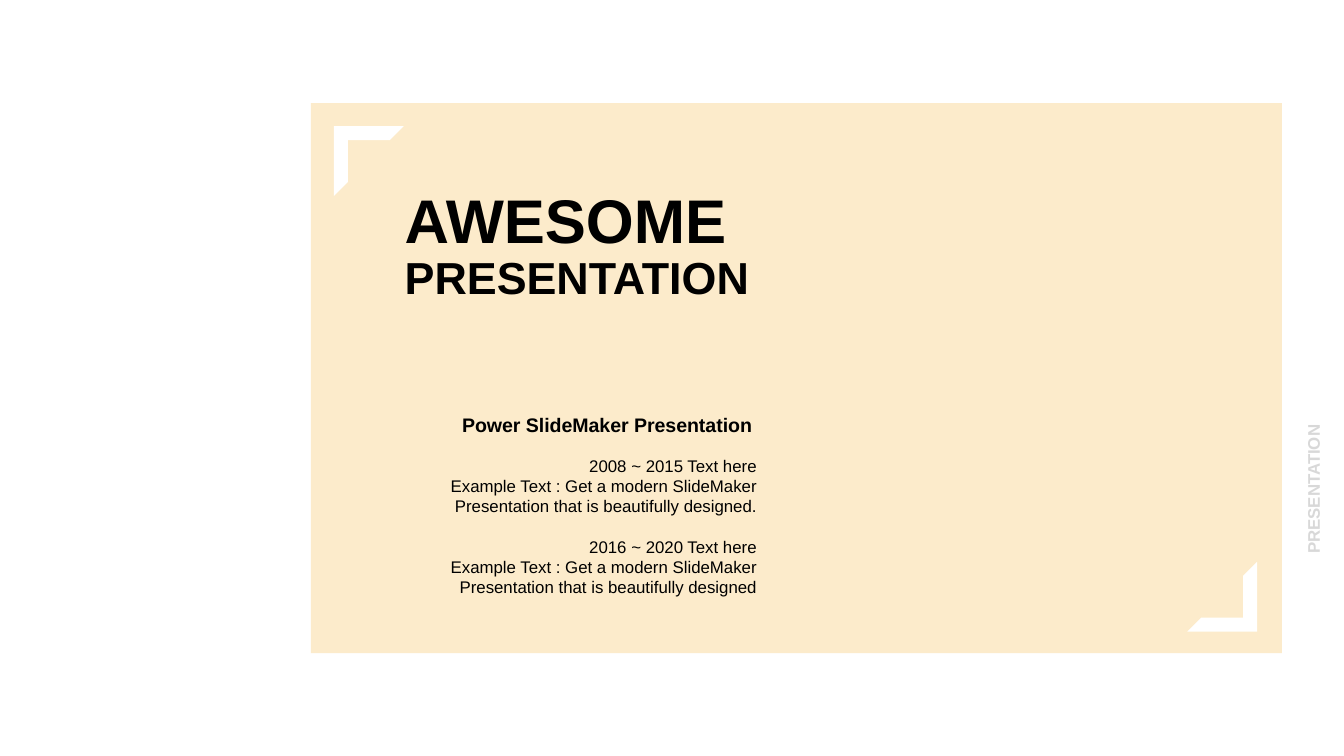
from pptx import Presentation
from pptx.dml.color import RGBColor as RGB
from pptx.enum.shapes import MSO_SHAPE as SHAPE
from pptx.enum.text import MSO_ANCHOR as ANCHOR, PP_ALIGN as ALIGN
from pptx.util import Inches, Pt

COLORS = {"white": "FFFFFF", "cream": "FCEBCB", "ink": "000000", "muted": "D8D8D8"}
COLS, ROWS = 100, 56.25
CELL = Inches(0.1)
CORNER = [(0, 0), (1, 0), (0.8, 0.2), (0.2, 0.2), (0.2, 0.8), (0, 1)]
DESIGN = "Example Text : Get a modern SlideMaker Presentation that is beautifully designed"


def grid(*cells):
    """Turn grid columns and rows into lengths."""
    return [round(c * CELL) for c in cells]


def paint(sp, color):
    """Give a shape a plain fill without line or shadow."""
    sp.fill.solid()
    sp.fill.fore_color.rgb = RGB.from_string(COLORS[color])
    sp.line.fill.background()
    sp.shadow.inherit = False


def add_text(s, box, lines, size=9, bold=False, color="ink", align=ALIGN.LEFT,
             anchor=ANCHOR.TOP, rotation=0, right=1, gaps=()):
    """Write lines in a box, with a space before each line listed in gaps."""
    sp = s.shapes.add_textbox(*grid(*box))
    sp.rotation = rotation
    tf = sp.text_frame
    tf.word_wrap = True
    tf.vertical_anchor = anchor
    tf.margin_right = grid(right)[0]
    for i, line in enumerate(lines):
        p = tf.paragraphs[0] if i == 0 else tf.add_paragraph()
        p.alignment = align
        if i in gaps:
            p.space_before = Pt(size * 1.2)
        r = p.add_run()
        r.text = line
        r.font.name, r.font.size, r.font.bold = "Arial", Pt(size), bold
        r.font.color.rgb = RGB.from_string(COLORS[color])


def add_corner(s, x, y, size, rotation=0):
    """Draw a corner bracket in a square."""
    points = [grid(x + px * size, y + py * size) for px, py in CORNER]
    builder = s.shapes.build_freeform(*points[0])
    builder.add_line_segments(points[1:])
    sp = builder.convert_to_shape()
    sp.rotation = rotation
    paint(sp, "white")


def add_panel(s, x, y, w, h):
    """Draw the cream panel with brackets in two opposite corners."""
    paint(s.shapes.add_shape(SHAPE.RECTANGLE, *grid(x, y, w, h)), "cream")
    size, inset = 5.2, 1.7
    add_corner(s, x + inset, y + inset, size)
    add_corner(s, x + w - inset - size - 0.15, y + h - inset - size + 0.1, size, 180)


def add_title(s, x, y, w):
    """Write the two-line title."""
    for word, size, top, h in (("AWESOME", 33, 0, 6.6), ("PRESENTATION", 24, 5.1, 5)):
        add_text(s, (x, y + top, w, h), [word], size=size, bold=True, anchor=ANCHOR.MIDDLE)


def add_details(s, x, y, w):
    """Write the heading and the two dated entries, aligned right."""
    add_text(s, (x, y, w, 2.8), ["Power SlideMaker Presentation"], size=10.5,
             bold=True, align=ALIGN.RIGHT, right=1.3)
    lines = ["2008 ~ 2015 Text here", DESIGN + ".", "2016 ~ 2020 Text here", DESIGN]
    add_text(s, (x, y + 3.15, w, 11.6), lines, align=ALIGN.RIGHT, gaps=(2,))


def add_side_label(s, x, y, w, h):
    """Write the label that reads upwards beside the panel."""
    add_text(s, (x, y, w, h), ["PRESENTATION"], bold=True, color="muted",
             anchor=ANCHOR.MIDDLE, rotation=270)


def main():
    """Build the cover slide."""
    prs = Presentation()
    prs.slide_width, prs.slide_height = grid(COLS, ROWS)
    s = prs.slides.add_slide(prs.slide_layouts[6])
    add_panel(s, 23.14, 7.68, 72.25, 40.92)
    add_title(s, 29.13, 13, 28.2)
    add_details(s, 32.2, 30.25, 25.08)
    add_side_label(s, 83.6, 26.85, 28.2, 2.5)
    prs.save("out.pptx")


if __name__ == "__main__":
    main()
